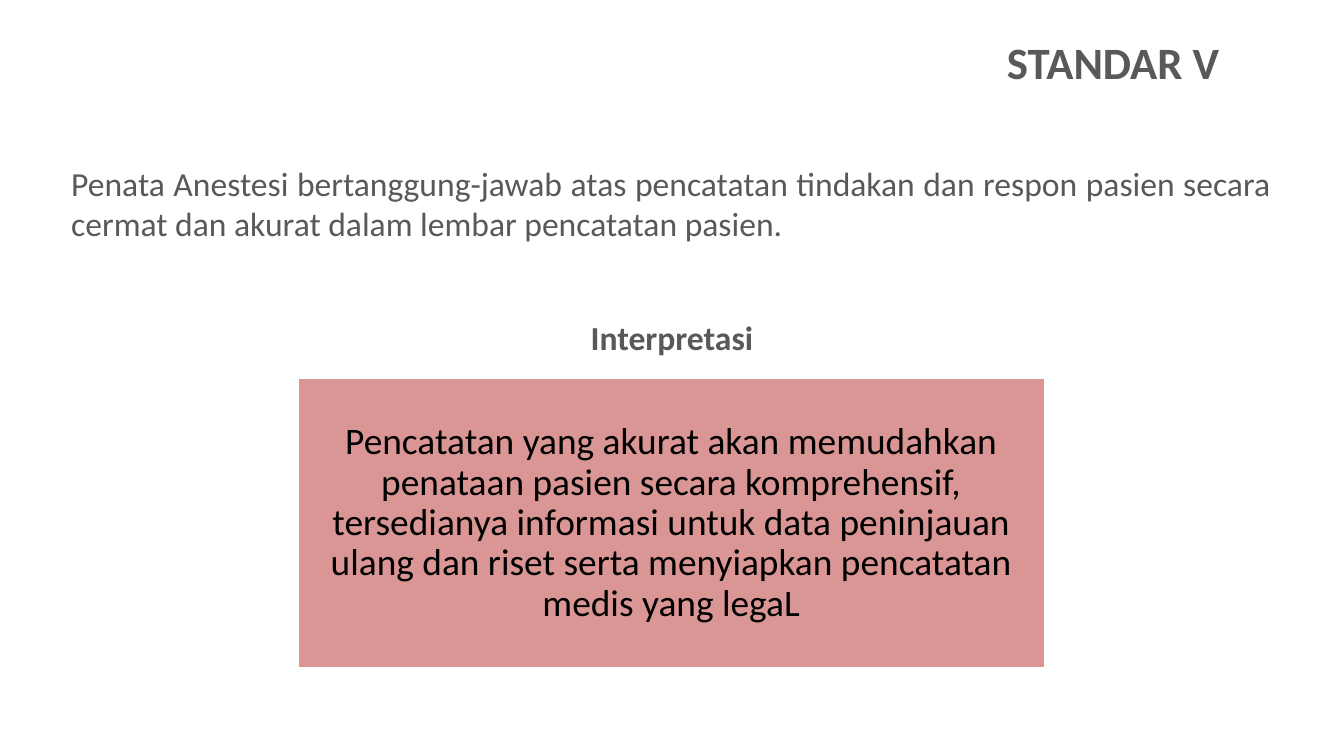
import pptx
import pptx.util
import pptx.dml.color
import pptx.enum.shapes
import pptx.enum.text
import pptx.oxml.ns
import lxml.etree

Inches = pptx.util.Inches
Pt = pptx.util.Pt
ALIGN = pptx.enum.text.PP_ALIGN
ANCHOR = pptx.enum.text.MSO_ANCHOR

GREY = pptx.dml.color.RGBColor(0x59, 0x59, 0x59)
BLACK = pptx.dml.color.RGBColor(0x00, 0x00, 0x00)
WHITE = pptx.dml.color.RGBColor(0xFF, 0xFF, 0xFF)
ROSE = pptx.dml.color.RGBColor(0xD9, 0x96, 0x94)
FONT = "Calibri"


def place(sp, box):
    sp.left, sp.top, sp.width, sp.height = (Inches(v) for v in box)


def write(sp, text, size, color, align, bold=False, anchor=ANCHOR.TOP):
    tf = sp.text_frame
    tf.word_wrap = True
    tf.auto_size = pptx.enum.text.MSO_AUTO_SIZE.NONE
    tf.vertical_anchor = anchor
    p = tf.paragraphs[0]
    p.alignment = align
    p.space_before = Pt(0)
    r = p.add_run()
    r.text = text
    r.font.name = FONT
    r.font.size = Pt(size)
    r.font.bold = bold
    r.font.color.rgb = color
    return p


def add_heading(slide, box):
    sp = slide.shapes.add_textbox(*(Inches(v) for v in box))
    write(sp, "STANDAR V", 24, GREY, ALIGN.RIGHT, bold=True)


def add_statement(slide, box):
    sp = slide.shapes.title
    place(sp, box)
    write(sp, "Penata Anestesi bertanggung-jawab atas pencatatan tindakan dan "
              "respon pasien secara cermat dan akurat dalam lembar pencatatan "
              "pasien.", 18, GREY, ALIGN.JUSTIFY)


def add_subheading(slide, box):
    sp = slide.placeholders[1]
    place(sp, box)
    p = write(sp, "Interpretasi", 18, GREY, ALIGN.CENTER, bold=True)
    pPr = p._p.get_or_add_pPr()
    pPr.set("marL", "0")
    pPr.set("indent", "0")
    lxml.etree.SubElement(pPr, pptx.oxml.ns.qn("a:buNone"))


def add_interpretation(slide, box):
    sp = slide.shapes.add_shape(pptx.enum.shapes.MSO_SHAPE.RECTANGLE,
                                *(Inches(v) for v in box))
    sp.shadow.inherit = False
    sp.fill.solid()
    sp.fill.fore_color.rgb = ROSE
    sp.line.color.rgb = WHITE
    sp.line.width = Pt(2)
    tf = sp.text_frame
    tf.margin_left = tf.margin_right = Inches(0.08)
    tf.margin_top = tf.margin_bottom = Inches(0.08)
    p = write(sp, "Pencatatan yang akurat akan memudahkan penataan pasien secara "
                  "komprehensif, tersedianya informasi untuk data peninjauan ulang "
                  "dan riset serta menyiapkan pencatatan medis yang legaL",
              20, BLACK, ALIGN.CENTER, anchor=ANCHOR.MIDDLE)
    p.line_spacing = 0.9


def main():
    prs = pptx.Presentation()
    prs.slide_width = Inches(10)
    prs.slide_height = prs.slide_width * 9 // 16
    slide = prs.slides.add_slide(prs.slide_layouts[1])
    add_statement(slide, (0.43, 1.16, 9.13, 0.94))
    add_heading(slide, (3.19, 0.21, 5.98, 0.52))
    add_subheading(slide, (0.63, 2.31, 8.74, 0.44))
    add_interpretation(slide, (2.21, 2.81, 5.57, 2.17))
    prs.save("out.pptx")


if __name__ == "__main__":
    main()
